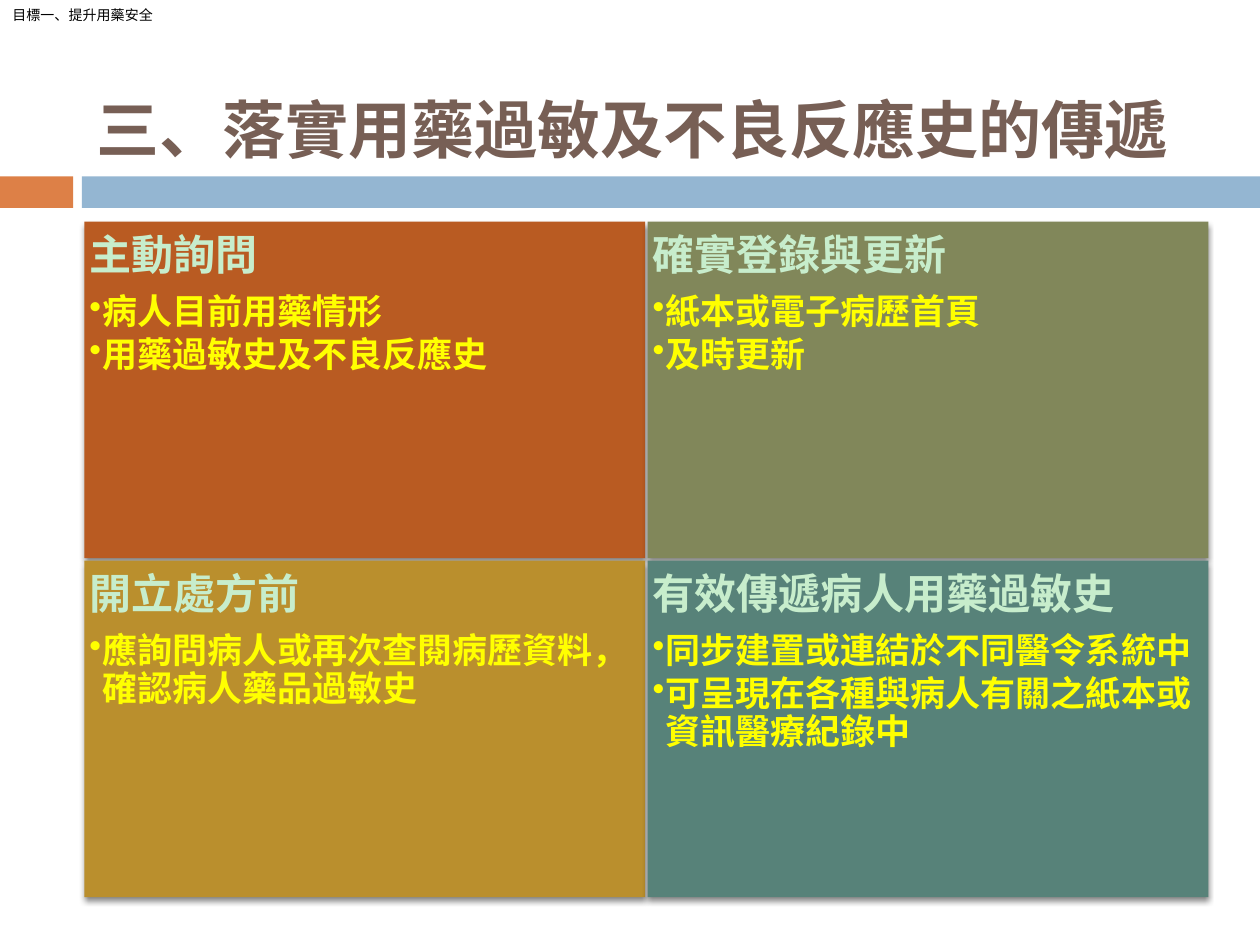
from dataclasses import dataclass

from lxml.etree import SubElement
from pptx import Presentation
from pptx.dml.color import RGBColor
from pptx.enum.shapes import MSO_SHAPE
from pptx.enum.text import MSO_ANCHOR, PP_ALIGN
from pptx.oxml.ns import qn
from pptx.shapes.autoshape import Shape
from pptx.slide import Slide
from pptx.util import Inches, Pt

LEFT, TOP = 0.67, 1.76
WIDTH, HEIGHT = 4.45, 2.67
GAP = 0.02
MINT, YELLOW = "C7EDCC", "FFFF00"


@dataclass(frozen=True)
class Band:
    left: float
    top: float
    width: float
    height: float
    color: str


@dataclass(frozen=True)
class Quadrant:
    heading: str
    points: tuple[str, ...]
    color: str


BANDS = (
    Band(0, 1.35, 10, 0.35, "FFFFFF"),
    Band(0, 1.4, 0.58, 0.25, "DD8047"),
    Band(0.65, 1.4, 9.35, 0.25, "94B6D2"),
)

QUADRANTS = (
    Quadrant("主動詢問", ("病人目前用藥情形", "用藥過敏史及不良反應史"), "B95B22"),
    Quadrant("確實登錄與更新", ("紙本或電子病歷首頁", "及時更新"), "81875A"),
    Quadrant("開立處方前", ("應詢問病人或再次查閱病歷資料，確認病人藥品過敏史",), "BA8F2D"),
    Quadrant(
        "有效傳遞病人用藥過敏史",
        ("同步建置或連結於不同醫令系統中", "可呈現在各種與病人有關之紙本或資訊醫療紀錄中"),
        "578279",
    ),
)


def rgb(color: str) -> RGBColor:
    return RGBColor.from_string(color)


def add_run(paragraph, text: str, size: float, font: str, color: str, bold: bool = True) -> None:
    run = paragraph.add_run()
    run.text = text
    run.font.size = Pt(size)
    run.font.name = font
    run.font.bold = bold
    run.font.color.rgb = rgb(color)


def add_band(slide: Slide, band: Band) -> Shape:
    rectangle = slide.shapes.add_shape(
        MSO_SHAPE.RECTANGLE,
        Inches(band.left), Inches(band.top), Inches(band.width), Inches(band.height),
    )
    rectangle.shadow.inherit = False
    rectangle.fill.solid()
    rectangle.fill.fore_color.rgb = rgb(band.color)
    rectangle.line.fill.background()
    return rectangle


def add_shadow(panel: Shape) -> None:
    effects = panel.element.spPr.find(qn("a:effectLst"))
    shadow = SubElement(
        effects, qn("a:outerShdw"),
        blurRad=str(Pt(3)), dist=str(Pt(2.4)), dir="5400000", rotWithShape="0",
    )
    black = SubElement(shadow, qn("a:srgbClr"), val="000000")
    SubElement(black, qn("a:alpha"), val="45000")


def add_bullet(paragraph) -> None:
    properties = paragraph._p.get_or_add_pPr()
    properties.set("marL", str(Inches(0.1)))
    properties.set("indent", str(Inches(-0.1)))
    SubElement(properties, qn("a:buChar"), char="•")


def add_quadrant(slide: Slide, quadrant: Quadrant, row: int, column: int) -> None:
    panel = add_band(slide, Band(
        LEFT + column * (WIDTH + GAP), TOP + row * (HEIGHT + GAP),
        WIDTH, HEIGHT, quadrant.color,
    ))
    add_shadow(panel)
    frame = panel.text_frame
    frame.word_wrap = True
    frame.vertical_anchor = MSO_ANCHOR.TOP
    frame.margin_left = frame.margin_right = Inches(0.04)
    frame.margin_top = frame.margin_bottom = Inches(0.1)

    heading = frame.paragraphs[0]
    heading.alignment = PP_ALIGN.LEFT
    heading.line_spacing = 0.9
    heading.space_after = Pt(8.4)
    add_run(heading, quadrant.heading, 24, "Calibri", MINT)

    for text in quadrant.points:
        point = frame.add_paragraph()
        point.level = 1
        point.alignment = PP_ALIGN.LEFT
        point.line_spacing = 0.9
        point.space_after = Pt(3)
        add_bullet(point)
        add_run(point, text, 20, "Calibri", YELLOW)


def add_goal(slide: Slide) -> None:
    goal = slide.shapes.add_textbox(Inches(0), Inches(0), Inches(2.19), Inches(0.24))
    goal.text_frame.word_wrap = True
    add_run(goal.text_frame.paragraphs[0], "目標一、提升用藥安全", 8,
            "Noto Sans CJK SC", "000000", bold=False)


def add_title(slide: Slide) -> None:
    title = slide.shapes.add_textbox(Inches(LEFT), Inches(0.25), Inches(8.92), Inches(1.08))
    title.text_frame.word_wrap = True
    title.text_frame.vertical_anchor = MSO_ANCHOR.MIDDLE
    line = title.text_frame.paragraphs[0]
    line.line_spacing = 1.76
    add_run(line, "三、落實用藥過敏及不良反應史的傳遞", 36, "Arial", "775F55")


def main() -> None:
    presentation = Presentation()
    presentation.slide_width = Inches(10)
    presentation.slide_height = Inches(7.5)
    slide = presentation.slides.add_slide(presentation.slide_layouts[6])
    for band in BANDS:
        add_band(slide, band)
    add_goal(slide)
    add_title(slide)
    for index, quadrant in enumerate(QUADRANTS):
        row, column = divmod(index, 2)
        add_quadrant(slide, quadrant, row, column)
    presentation.save("out.pptx")


if __name__ == "__main__":
    main()
